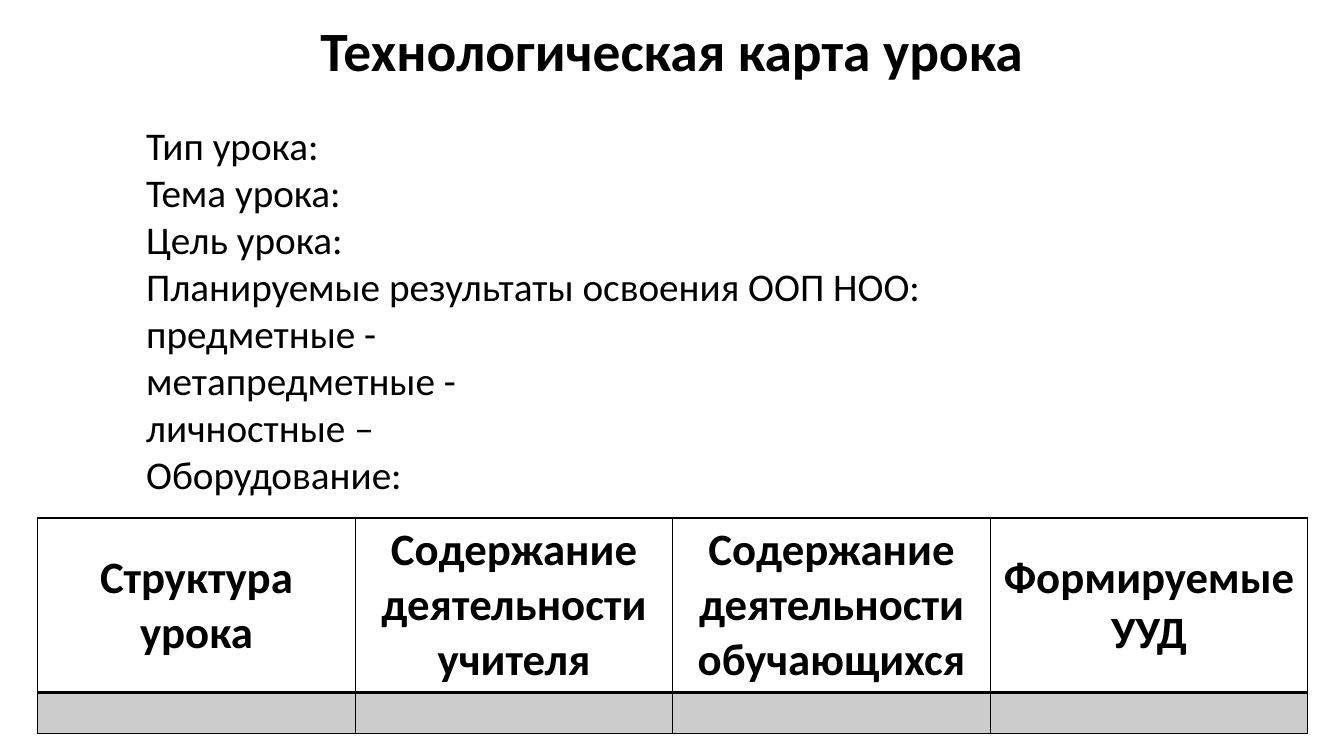
from lxml import etree
from pptx import Presentation
from pptx import util as u
from pptx.dml import color
from pptx.enum import text
from pptx.oxml import ns

BLACK = "000000"
FONT = "Calibri"
LESSON_FIELDS = [
    "Тип урока:",
    "Тема урока:",
    "Цель урока:",
    "Планируемые результаты освоения ООП НОО:",
    "предметные -",
    "метапредметные -",
    "личностные –",
    "Оборудование:",
]
STAGE_HEADINGS = [
    "Структура урока",
    "Содержание деятельности учителя",
    "Содержание деятельности обучающихся",
    "Формируемые УУД",
]


def rgb(value):
    return color.RGBColor.from_string(value)


def apply_format(target, values):
    for name, value in values.items():
        setattr(target, name, value)


def format_paragraph(paragraph, size, bold, values):
    apply_format(paragraph, values)
    for run in paragraph.runs:
        apply_format(run.font, {"name": FONT, "size": u.Pt(size), "bold": bold})
        run.font.color.rgb = rgb(BLACK)


def place(shape, box):
    names = ("left", "top", "width", "height")
    apply_format(shape, {name: u.Pt(value) for name, value in zip(names, box)})


def add_title(slide, box):
    title = slide.shapes.title
    place(title, box)
    title.text_frame.text = "Технологическая карта урока"
    apply_format(title.text_frame, {
        "vertical_anchor": text.MSO_ANCHOR.MIDDLE,
        "auto_size": text.MSO_AUTO_SIZE.NONE,
    })
    format_paragraph(title.text_frame.paragraphs[0], 39.6, True, {
        "alignment": text.PP_ALIGN.CENTER, "line_spacing": 0.9})


def add_lesson_fields(slide, box):
    body = slide.placeholders[1]
    place(body, box)
    body.text_frame.text = "\n".join(LESSON_FIELDS)
    apply_format(body.text_frame, {
        "word_wrap": True,
        "vertical_anchor": text.MSO_ANCHOR.TOP,
        "auto_size": text.MSO_AUTO_SIZE.NONE,
    })
    for paragraph in body.text_frame.paragraphs:
        format_paragraph(paragraph, 28, False, {
            "alignment": text.PP_ALIGN.LEFT, "space_before": u.Pt(0)})
        # Plain lines: no bullet and no hanging indent
        properties = paragraph._p.get_or_add_pPr()
        properties.set("marL", "0")
        properties.set("indent", "0")
        etree.SubElement(properties, ns.qn("a:buNone"))


def add_borders(cell, bottom_width):
    properties = cell._tc.get_or_add_tcPr()
    for index, side in enumerate("LRTB"):
        width = bottom_width if side == "B" else 1
        line = etree.Element(ns.qn(f"a:ln{side}"), w=str(u.Pt(width)))
        fill = etree.SubElement(line, ns.qn("a:solidFill"))
        etree.SubElement(fill, ns.qn("a:srgbClr"), val=BLACK)
        properties.insert(index, line)


def add_stage_table(slide, box, row_heights):
    left, top, width, height = (u.Pt(value) for value in box)
    table = slide.shapes.add_table(
        len(row_heights), len(STAGE_HEADINGS), left, top, width, height).table
    apply_format(table, {"first_row": False, "horz_banding": False})
    for row, row_height in zip(table.rows, row_heights):
        row.height = u.Pt(row_height)

    for column, heading in enumerate(STAGE_HEADINGS):
        # Heading cell
        header = table.cell(0, column)
        header.text = heading
        header.vertical_anchor = text.MSO_ANCHOR.MIDDLE
        header.fill.background()
        format_paragraph(header.text_frame.paragraphs[0], 32, True, {
            "alignment": text.PP_ALIGN.CENTER})
        add_borders(header, 2)

        # Empty cell with a translucent tint
        entry = table.cell(1, column)
        entry.fill.solid()
        entry.fill.fore_color.rgb = rgb(BLACK)
        tint = entry._tc.tcPr.find(".//" + ns.qn("a:srgbClr"))
        etree.SubElement(tint, ns.qn("a:alpha"), val="20000")
        add_borders(entry, 1)


def main():
    presentation = Presentation()
    apply_format(presentation, {"slide_width": u.Pt(960), "slide_height": u.Pt(540)})
    slide = presentation.slides.add_slide(presentation.slide_layouts[1])
    add_title(slide, (66, 14.4, 828, 48))
    add_stage_table(slide, (27, 370, 907.2, 153.6), (124.8, 28.8))
    add_lesson_fields(slide, (97.2, 82.8, 573, 278.6))
    presentation.save("out.pptx")


if __name__ == "__main__":
    main()
